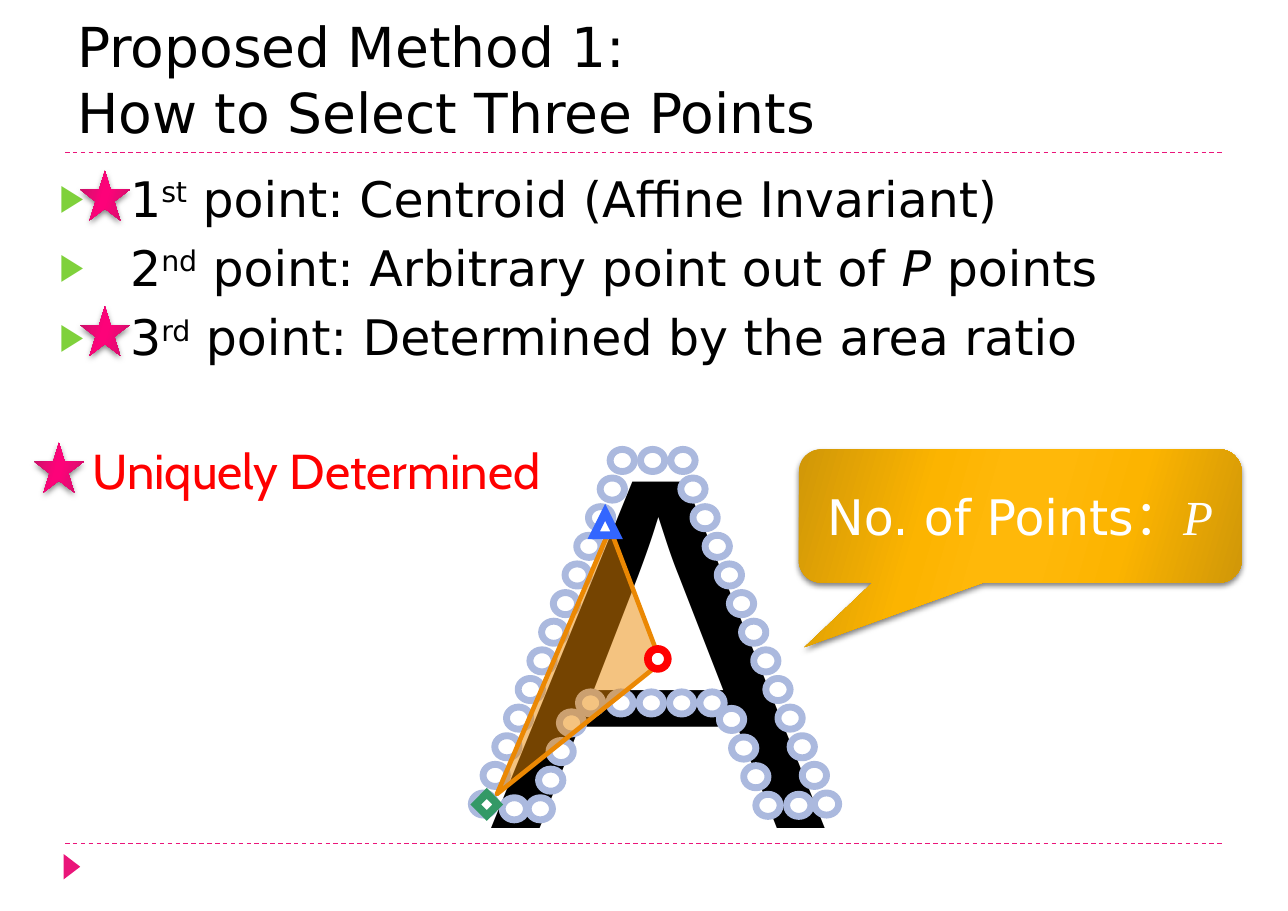
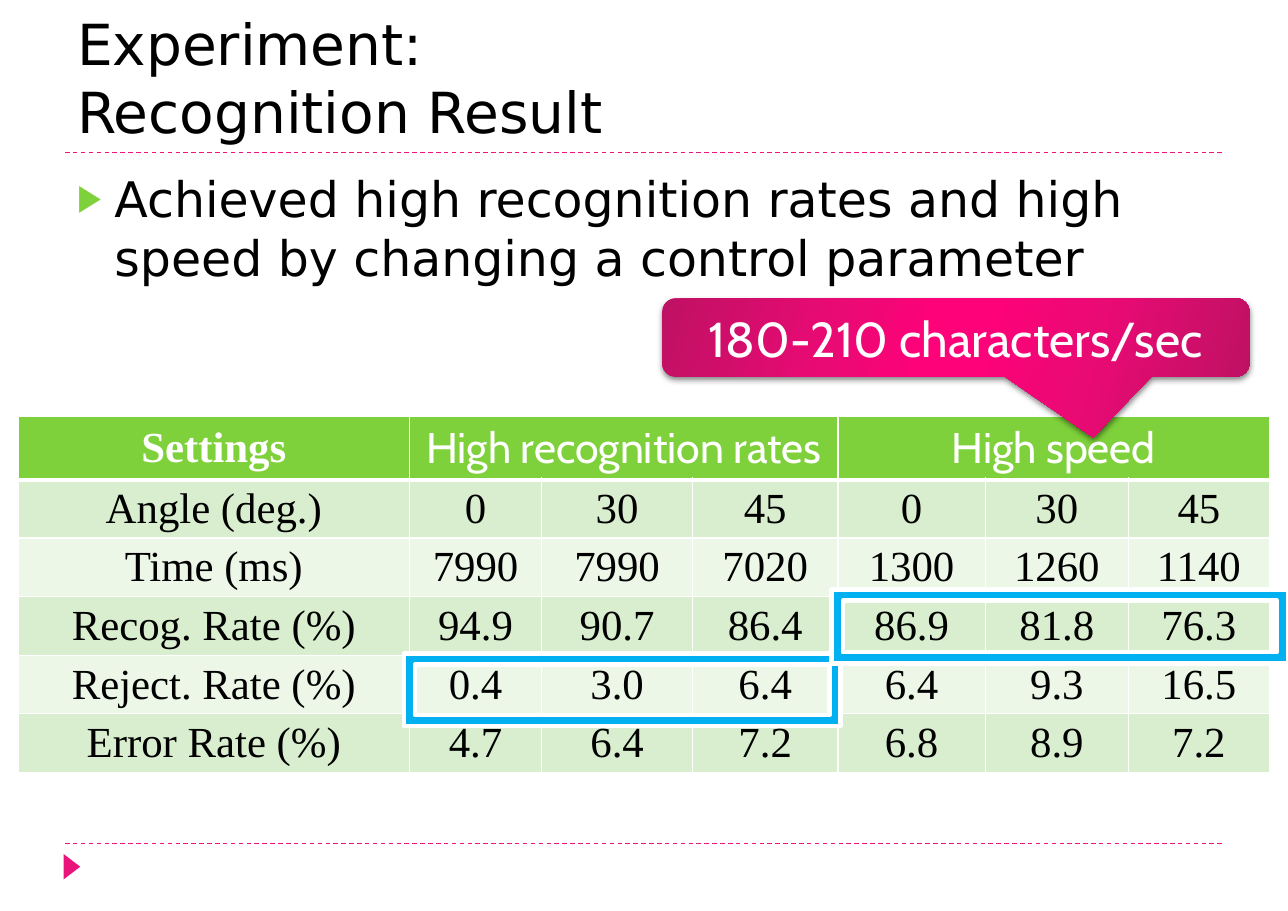
from lxml import etree
from pptx import Presentation
from pptx.dml.color import RGBColor
from pptx.enum import dml, shapes, text
from pptx.oxml.ns import qn
from pptx.util import Cm, Pt

BLACK = RGBColor(0x00, 0x00, 0x00)
WHITE = RGBColor(0xFF, 0xFF, 0xFF)
RED = RGBColor(0xFF, 0x00, 0x00)
PINK = RGBColor(0xEA, 0x15, 0x7A)
GREEN = RGBColor(0x7F, 0xD1, 0x3B)
BAND_DARK = RGBColor(0xD8, 0xEE, 0xCE)
BAND_LIGHT = RGBColor(0xEC, 0xF7, 0xE8)
DOT_BLUE = RGBColor(0xAB, 0xB9, 0xDE)
ORANGE = RGBColor(0xEB, 0x88, 0x03)
MARK_BLUE = RGBColor(0x33, 0x66, 0xFF)
MARK_GREEN = RGBColor(0x33, 0x99, 0x66)
SKY = RGBColor(0x00, 0xB0, 0xF0)

# Glossy fills: edge, shoulder and middle colour, mirrored over the stops
STOPS = (0, 30, 45, 55, 73, 100)
GOLD_GLOSS = [RGBColor.from_string(c) for c in ("D09708", "FCB400", "FFB809")]
PINK_GLOSS = [RGBColor.from_string(c) for c in ("BF1164", "EA0A74", "FD0279")]

SANS, ROUND, SERIF = "DejaVu Sans", "Cabin", "Times New Roman"
SHAPE = shapes.MSO_SHAPE
CENTER = text.PP_ALIGN.CENTER
MIDDLE = text.MSO_ANCHOR.MIDDLE


# ---------- helpers ----------
def sub(parent, tag, **attrs):
    el = etree.SubElement(parent, qn(tag))
    for name, value in attrs.items():
        el.set(name, str(value))
    return el


def write(p, words, size=32, font=SANS, color=BLACK, bold=False, italic=False,
          raised=False):
    """Add formatted text to a paragraph; a newline becomes a line break."""
    for i, line in enumerate(words.split("\n")):
        if i:
            p.add_line_break()
        r = p.add_run()
        r.text = line
        f = r.font
        f.size, f.name, f.bold, f.italic = Pt(size), font, bold, italic
        f.color.rgb = color
        if raised:
            r._r.get_or_add_rPr().set("baseline", "30000")


def set_frame(tf, anchor, wrap=True):
    tf.auto_size = text.MSO_AUTO_SIZE.NONE
    tf.word_wrap = wrap
    tf.vertical_anchor = anchor
    tf.margin_left = tf.margin_right = Cm(0.28)
    tf.margin_top = tf.margin_bottom = Cm(0.15)


def place(sp, left, top, width, height):
    sp.left, sp.top, sp.width, sp.height = map(Cm, (left, top, width, height))


def add_shape(s, kind, box, fill=None, line=None, weight=1, adj=(), rot=0):
    sp = s.shapes.add_shape(kind, *map(Cm, box))
    sp.shadow.inherit = False
    sp.rotation = rot
    for i, value in enumerate(adj):
        sp.adjustments[i] = value
    if fill is not None:
        sp.fill.solid()
        sp.fill.fore_color.rgb = fill
    if line is None:
        sp.line.fill.background()
    else:
        sp.line.color.rgb = line
        sp.line.width = Pt(weight)
    return sp


def add_glossy(s, kind, box, gloss, adj=()):
    """Shape with a mirrored gradient and a soft shadow below."""
    sp = add_shape(s, kind, box, adj=adj)
    sp.fill.gradient()
    sp.fill.gradient_angle = 344
    pr = sp._element.spPr
    stops = pr.find(qn("a:gradFill")).find(qn("a:gsLst"))
    for gs in list(stops):
        stops.remove(gs)
    for pos, color in zip(STOPS, gloss + gloss[::-1]):
        sub(sub(stops, "a:gs", pos=pos * 1000), "a:srgbClr", val=color)
    shadow = sub(pr.find(qn("a:effectLst")), "a:outerShdw", blurRad=Pt(4),
                 dist=Pt(2), dir=5400000, algn="ctr", rotWithShape=0)
    sub(sub(shadow, "a:srgbClr", val="000000"), "a:alpha", val=50000)
    return sp


def add_callout(s, box, gloss, adj, runs):
    sp = add_glossy(s, SHAPE.ROUNDED_RECTANGULAR_CALLOUT, box, gloss, adj)
    set_frame(sp.text_frame, MIDDLE)
    p = sp.text_frame.paragraphs[0]
    p.alignment = CENTER
    for words, fmt in runs:
        write(p, words, color=WHITE, **fmt)


def add_text(s, box, words, **fmt):
    sp = s.shapes.add_textbox(*map(Cm, box))
    set_frame(sp.text_frame, text.MSO_ANCHOR.TOP, wrap=False)
    write(sp.text_frame.paragraphs[0], words, **fmt)


# ---------- parts shared by both slides ----------
def add_base(prs, title, size):
    s = prs.slides.add_slide(prs.slide_layouts[1])
    for y in (3.51, 19.45):
        rule = s.shapes.add_connector(shapes.MSO_CONNECTOR.STRAIGHT,
                                      Cm(1.5), Cm(y), Cm(28.22), Cm(y))
        rule.line.color.rgb = PINK
        rule.line.width = Pt(0.75)
        rule.line.dash_style = dml.MSO_LINE.DASH
        sub(rule._element.spPr, "a:effectLst")
    add_shape(s, SHAPE.ISOSCELES_TRIANGLE, (1.37, 19.79, 0.58, 0.38), PINK, rot=90)

    place(s.shapes.title, 1.5, 0.46, 26.72, 3.02)
    tf = s.shapes.title.text_frame
    set_frame(tf, text.MSO_ANCHOR.BOTTOM)
    tf.paragraphs[0].alignment = text.PP_ALIGN.LEFT
    write(tf.paragraphs[0], title, size=size)
    return s


def fill_body(s, box, items, indent, hang):
    """Bulleted list; each item is a list of (text, format) runs."""
    body = s.placeholders[1]
    place(body, *box)
    tf = body.text_frame
    set_frame(tf, text.MSO_ANCHOR.TOP)
    for i, runs in enumerate(items):
        p = tf.add_paragraph() if i else tf.paragraphs[0]
        p.space_before = Pt(6.9)
        pr = p._p.get_or_add_pPr()
        pr.set("marL", str(Cm(indent)))
        pr.set("indent", str(-Cm(hang)))
        sub(sub(pr, "a:buClr"), "a:srgbClr", val=GREEN)
        sub(pr, "a:buSzPct", val=76000)
        sub(pr, "a:buChar", char="▶")
        for words, fmt in runs:
            write(p, words, **fmt)


# ---------- slide 1 ----------
def draw_letter(s, left, top):
    """Letter A with its contour points and the selected triangle."""
    add_text(s, (left, top, 8.41, 14.35), "A", size=329, font="Arial")

    # Contour runs: first point, step to the next, number of points
    contour = [
        (3.05, 3.02, 0.7, 0, 3),        # top edge
        (2.82, 3.68, -0.27, 0.66, 12),  # outer left
        (4.68, 3.68, 0.28, 0.66, 12),   # outer right
        (2.32, 8.61, 0.7, 0, 5),        # crossbar
        (1.88, 9.07, -0.24, 0.66, 4),   # inner left
        (5.57, 8.99, 0.28, 0.66, 4),    # inner right
        (0.56, 11.05, 0, 0, 1),         # left foot
        (7.12, 10.97, 0, 0, 1),         # right foot
    ]
    for x, y, dx, dy, count in contour:
        for i in range(count):
            add_shape(s, SHAPE.OVAL,
                      (left + x + i * dx, top + y + i * dy, 0.56, 0.51),
                      WHITE, DOT_BLUE, 4.5)

    area = add_shape(s, SHAPE.ISOSCELES_TRIANGLE,
                     (left - 0.53, top + 7.21, 6.65, 2.29),
                     ORANGE, ORANGE, 3, adj=[0.358], rot=113.1)
    fill_color = area._element.spPr.find(qn("a:solidFill"))[0]
    sub(fill_color, "a:alpha", val=50000)

    # Sharp-cornered markers on the three selected points
    corners = [
        (SHAPE.ISOSCELES_TRIANGLE, 2.67, 4.47, 0.53, MARK_BLUE),
        (SHAPE.DIAMOND, -0.05, 10.95, 0.51, MARK_GREEN),
        (SHAPE.OVAL, 3.92, 7.62, 0.46, RED),
    ]
    for kind, x, y, size, color in corners:
        sp = add_shape(s, kind, (left + x, top + y, size, size), WHITE, color, 5)
        sub(sp._element.spPr.find(qn("a:ln")), "a:miter", lim=800000)


def build_method(prs):
    s = add_base(prs, "Proposed Method 1:\nHow to Select Three Points", 36)
    sup = {"raised": True}
    items = [
        [("1", {}), ("st", sup), (" point: Centroid (Affine Invariant)", {})],
        [("2", {}), ("nd", sup), (" point: Arbitrary point out of ", {}),
         ("P", {"italic": True}), (" points", {})],
        [("3", {}), ("rd", sup), (" point: Determined by the area ratio", {})],
    ]
    fill_body(s, (0.84, 3.73, 28.14, 15.11), items, 1.88, 1.63)
    draw_letter(s, 11.02, 7.34)
    add_callout(s, (18.42, 10.36, 10.21, 3.07), GOLD_GLOSS, (-0.487, 0.985, 0.167),
                [("No. of Points：", {}), ("P", {"font": SERIF, "italic": True})])
    # Stars mark the uniquely determined points
    for x, y in ((1.85, 3.94), (1.85, 7.06), (0.79, 10.21)):
        add_glossy(s, SHAPE.STAR_5_POINT, (x, y, 1.14, 1.14), PINK_GLOSS)
    add_text(s, (1.85, 10.01, 11.07, 1.63), "Uniquely Determined",
             font=ROUND, color=RED)


# ---------- slide 2 ----------
RESULTS = [
    ("Settings", "High recognition rates", "", "", "High speed", "", ""),
    ("Angle (deg.)", "0", "30", "45", "0", "30", "45"),
    ("Time (ms)", "7990", "7990", "7020", "1300", "1260", "1140"),
    ("Recog. Rate (%)", "94.9", "90.7", "86.4", "86.9", "81.8", "76.3"),
    ("Reject. Rate (%)", "0.4", "3.0", "6.4", "6.4", "9.3", "16.5"),
    ("Error Rate (%)", "4.7", "6.4", "7.2", "6.8", "8.9", "7.2"),
]
COL_WIDTHS = (9.02, 3.05, 3.48, 3.35, 3.4, 3.3, 3.25)


def style_cell(cell, row, fill):
    pr = cell._tc.get_or_add_tcPr()
    heavy = {0: "a:lnB", 1: "a:lnT"}.get(row)  # rule under the header
    for side in ("a:lnL", "a:lnR", "a:lnT", "a:lnB"):
        ln = sub(pr, side, w=Pt(3 if side == heavy else 1))
        sub(sub(ln, "a:solidFill"), "a:srgbClr", val=WHITE)
    cell.fill.solid()
    cell.fill.fore_color.rgb = fill
    cell.vertical_anchor = MIDDLE


def add_results(s, left, top):
    head, height = 1.45, 1.35
    table = s.shapes.add_table(
        len(RESULTS), len(COL_WIDTHS), Cm(left), Cm(top), Cm(sum(COL_WIDTHS)),
        Cm(head + height * (len(RESULTS) - 1))).table
    for col, width in zip(table.columns, COL_WIDTHS):
        col.width = Cm(width)
    for r, values in enumerate(RESULTS):
        table.rows[r].height = Cm(height if r else head)
        fill = (BAND_DARK if r % 2 else BAND_LIGHT) if r else GREEN
        for c, value in enumerate(values):
            cell = table.cell(r, c)
            style_cell(cell, r, fill)
            if value:
                p = cell.text_frame.paragraphs[0]
                p.alignment = CENTER
                write(p, value, size=28, color=BLACK if r else WHITE,
                      font=SERIF if r or not c else ROUND, bold=not (r or c))
    for first in (1, 4):
        table.cell(0, first).merge(table.cell(0, first + 2))


def build_result(prs):
    s = add_base(prs, "Experiment:\nRecognition Result", 37)
    fill_body(s, (1.5, 3.73, 26.72, 3.99),
              [[("Achieved high recognition rates and high speed by changing "
                 "a control parameter", {})]], 0.86, 0.86)
    add_results(s, 0.42, 9.6)
    # Frames around the values to notice
    for box in ((9.32, 15.06, 10.06, 1.68), (19.18, 13.59, 10.52, 1.7)):
        add_shape(s, SHAPE.FRAME, box, SKY, WHITE, 3, adj=[0.151])
    add_callout(s, (15.27, 6.88, 13.54, 1.8), PINK_GLOSS, (0.234, 1.281, 0.167),
                [("180-210 characters/sec", {"font": ROUND})])


def main():
    prs = Presentation()
    prs.slide_width, prs.slide_height = Cm(29.7), Cm(21)
    build_method(prs)
    build_result(prs)
    prs.save("out.pptx")


if __name__ == "__main__":
    main()
